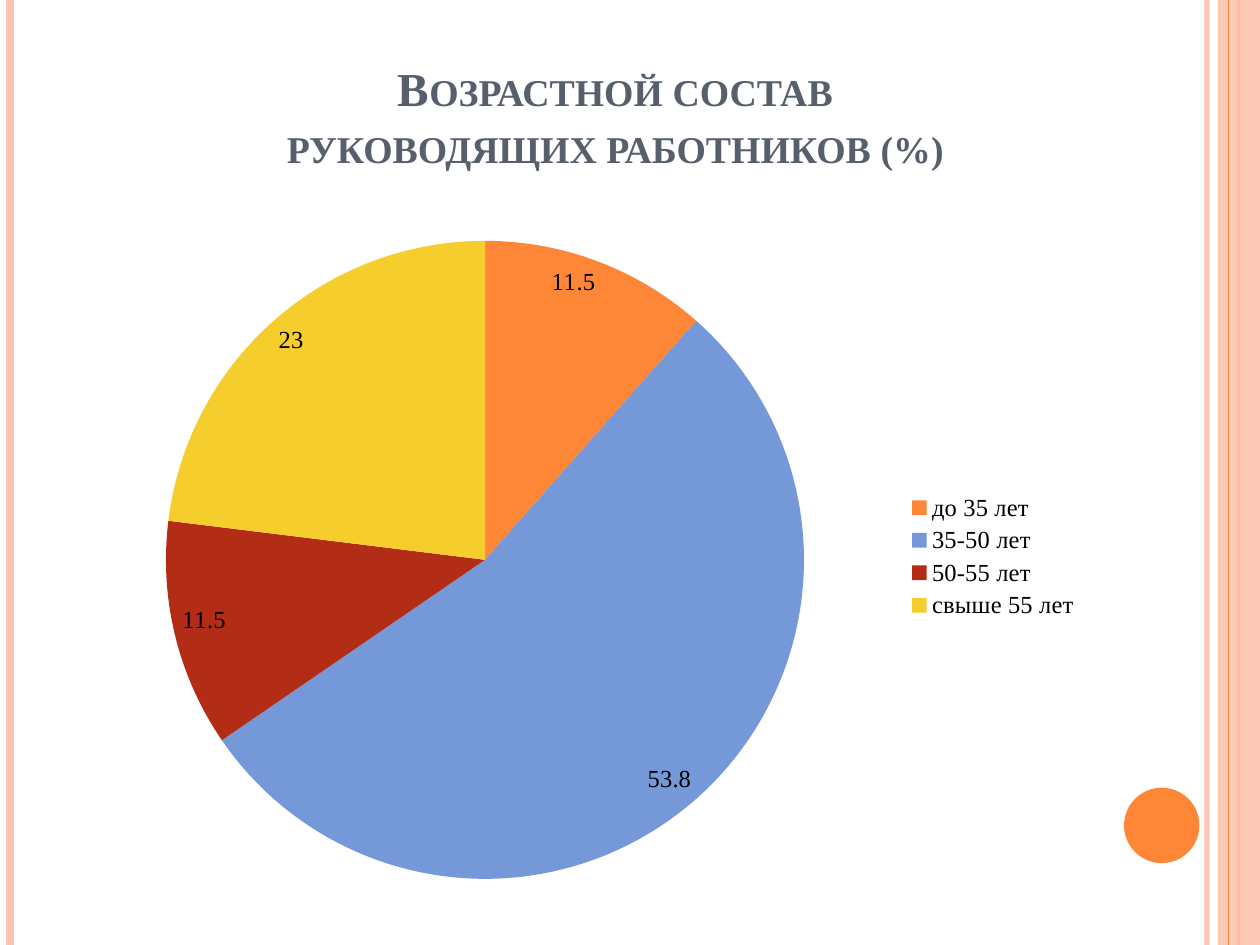
from lxml import etree
from pptx import Presentation
from pptx import util as u
from pptx.chart.data import CategoryChartData
from pptx.dml.color import RGBColor
from pptx.enum import chart as charts, shapes, text
from pptx.oxml import parse_xml
from pptx.oxml.ns import nsdecls, qn

WIDTH, HEIGHT = 25.4, 19.05
FONT = "Times New Roman"
ORANGE, PEACH = "FE8637", "FEC3AE"
AGES = [
    ("до 35 лет", 11.5, ORANGE),
    ("35-50 лет", 53.8, "7598D9"),
    ("50-55 лет", 11.5, "B32C16"),
    ("свыше 55 лет", 23, "F5CD2D"),
]


def paint(color_format, color, opacity=100):
    color_format.rgb = RGBColor.from_string(color)
    if opacity < 100:
        element = color_format._xFill.find(qn("a:srgbClr"))
        etree.SubElement(element, qn("a:alpha"), val=str(opacity * 1000))


def add_shape(slide, kind, box, color, opacity=100):
    shape = slide.shapes.add_shape(kind, *map(u.Cm, box))
    shape.shadow.inherit = False
    shape.fill.solid()
    paint(shape.fill.fore_color, color)
    if opacity < 100:
        element = shape._element.spPr.find(f"{qn('a:solidFill')}/{qn('a:srgbClr')}")
        etree.SubElement(element, qn("a:alpha"), val=str(opacity * 1000))
    shape.line.fill.background()


def add_rule(slide, x, top, height, color, points, opacity=100):
    line = slide.shapes.add_connector(
        shapes.MSO_CONNECTOR.STRAIGHT, *map(u.Cm, (x, top, x, top + height)))
    line.line.width = u.Pt(points)
    line.line.fill.solid()
    paint(line.line.fill.fore_color, color)
    properties = line._element.spPr
    if opacity < 100:
        element = properties.find(f".//{qn('a:srgbClr')}")
        etree.SubElement(element, qn("a:alpha"), val=str(opacity * 1000))
    etree.SubElement(properties, qn("a:effectLst"))


def add_text(slide, box, content, size, color, bold=False, small_caps=False,
             bottom_margin=0.13):
    shape = slide.shapes.add_textbox(*map(u.Cm, box))
    frame = shape.text_frame
    frame.word_wrap = True
    frame.vertical_anchor = text.MSO_ANCHOR.BOTTOM
    frame.margin_top = 0
    frame.margin_bottom = u.Cm(bottom_margin)
    paragraph = frame.paragraphs[0]
    paragraph.alignment = text.PP_ALIGN.CENTER
    paragraph.text = content
    for run in paragraph.runs:
        run.font.name, run.font.size, run.font.bold = FONT, u.Pt(size), bold
        paint(run.font.color, color)
        if small_caps:
            run._r.get_or_add_rPr().set("cap", "small")


def add_frame(slide, left, top, width, height):
    """Vertical stripes on both edges and the disc at lower right."""
    right = left + width
    add_rule(slide, right - 1.07, top, height, PEACH, 3, opacity=93)
    add_rule(slide, left + 0.21, top, height, PEACH, 4.5)
    add_rule(slide, right - 0.43, top, height, ORANGE, 1.5)
    add_shape(slide, shapes.MSO_SHAPE.RECTANGLE,
              (right - 0.85, top, 0.85, height), PEACH, opacity=87)
    add_rule(slide, right - 0.64, top, height, ORANGE, 0.75)
    add_shape(slide, shapes.MSO_SHAPE.OVAL,
              (right - 2.74, top + 15.88, 1.52, 1.52), ORANGE)


def add_age_chart(slide, left, top, width, height):
    """Pie of age groups with its legend on the right."""
    names, values, colors = zip(*AGES)
    data = CategoryChartData()
    data.categories = names
    data.add_series("Series 1", values)
    chart = slide.shapes.add_chart(
        charts.XL_CHART_TYPE.PIE, *map(u.Cm, (left, top, width, height)), data).chart
    chart.has_title = False
    chart.font.name, chart.font.size = FONT, u.Pt(14)
    paint(chart.font.color, "000000")
    chart.has_legend = True
    chart.legend.position = charts.XL_LEGEND_POSITION.RIGHT
    chart.legend.include_in_layout = False

    plot = chart.plots[0]
    plot.vary_by_categories = True
    for index, color in enumerate(colors):
        fill = plot.series[0].points[index].format.fill
        fill.solid()
        paint(fill.fore_color, color)
    plot.has_data_labels = True
    plot.data_labels.show_value = True
    plot.data_labels.show_percentage = False
    plot.data_labels.position = charts.XL_LABEL_POSITION.INSIDE_END

    # Plot area as fractions of the chart
    fractions = {"x": 0.1, "y": 0.03, "w": 0.62, "h": 0.95}
    sizes = "".join(f'<c:{key} val="{value}"/>' for key, value in fractions.items())
    layout = parse_xml(
        f'<c:layout {nsdecls("c")}><c:manualLayout><c:layoutTarget val="inner"/>'
        f'<c:xMode val="edge"/><c:yMode val="edge"/>{sizes}</c:manualLayout></c:layout>')
    area = chart._chartSpace.chart.plotArea
    for old in area.findall(qn("c:layout")):
        area.remove(old)
    area.insert(0, layout)


def main():
    presentation = Presentation()
    presentation.slide_width, presentation.slide_height = u.Cm(WIDTH), u.Cm(HEIGHT)
    slide = presentation.slides.add_slide(presentation.slide_layouts[6])
    add_frame(slide, 0, 0, WIDTH, HEIGHT)
    add_text(slide, (1.09, 1.52, 22.63, 3.18),
             "Возрастной состав\vруководящих работников (%)",
             size=27, color="575F6D", bold=True, small_caps=True, bottom_margin=1.22)
    add_age_chart(slide, 1.27, 4.45, 20.75, 13.54)
    presentation.save("out.pptx")


if __name__ == "__main__":
    main()
